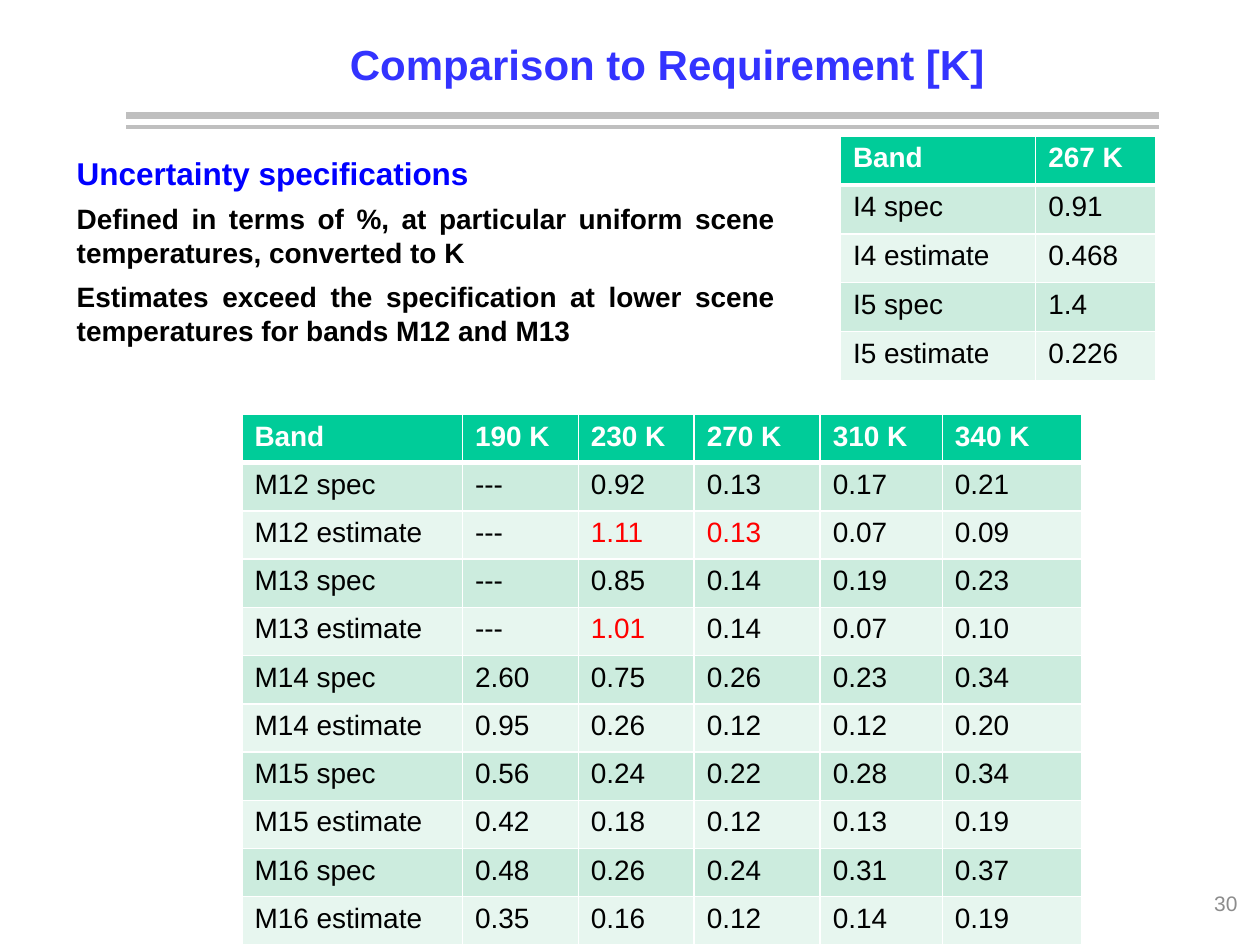
from lxml.etree import SubElement
from pptx import Presentation
from pptx.dml.color import RGBColor
from pptx.enum.shapes import MSO_CONNECTOR as Connector, MSO_SHAPE as Shape
from pptx.enum.text import MSO_ANCHOR as Anchor, PP_ALIGN as Align
from pptx.oxml import parse_xml
from pptx.oxml.ns import nsdecls, qn
from pptx.util import Inches, Pt

COLORS = {
    "title": "3333FF", "heading": "0000FF", "text": "000000", "alert": "FF0000",
    "rule": "BFBFBF", "number": "8C8C8C", "white": "FFFFFF",
    "header": "00CC99", "dark_band": "CCECDE", "light_band": "E7F6EF",
}

I_BANDS = [
    ["Band", "267 K"],
    ["I4 spec", "0.91"],
    ["I4 estimate", "0.468"],
    ["I5 spec", "1.4"],
    ["I5 estimate", "0.226"],
]
M_BANDS = [
    ["Band", "190 K", "230 K", "270 K", "310 K", "340 K"],
    ["M12 spec", "---", "0.92", "0.13", "0.17", "0.21"],
    ["M12 estimate", "---", "1.11", "0.13", "0.07", "0.09"],
    ["M13 spec", "---", "0.85", "0.14", "0.19", "0.23"],
    ["M13 estimate", "---", "1.01", "0.14", "0.07", "0.10"],
    ["M14 spec", "2.60", "0.75", "0.26", "0.23", "0.34"],
    ["M14 estimate", "0.95", "0.26", "0.12", "0.12", "0.20"],
    ["M15 spec", "0.56", "0.24", "0.22", "0.28", "0.34"],
    ["M15 estimate", "0.42", "0.18", "0.12", "0.13", "0.19"],
    ["M16 spec", "0.48", "0.26", "0.24", "0.31", "0.37"],
    ["M16 estimate", "0.35", "0.16", "0.12", "0.14", "0.19"],
]
EXCEEDED = {(2, 2), (2, 3), (4, 2)}


def rgb(name):
    """Return the palette color with the given name."""
    return RGBColor.from_string(COLORS[name])


def style(para, size, color, bold=False, align=Align.LEFT):
    """Set the font and alignment of a paragraph."""
    para.alignment = align
    para.font.name = "Arial"
    para.font.size = Pt(size)
    para.font.bold = bold
    para.font.color.rgb = rgb(color)


def add_label(page, box, text, size, color, bold, align):
    """Place one vertically centered line of text in the box."""
    frame = page.shapes.add_textbox(*map(Inches, box)).text_frame
    frame.word_wrap = True
    frame.vertical_anchor = Anchor.MIDDLE
    frame.text = text
    style(frame.paragraphs[0], size, color, bold, align)


def add_rules(page, box):
    """Draw a thick rule on the top edge of the box and a thin one on its bottom."""
    left, top, width, height = box
    for y, weight in ((top, 4), (top + height, 2)):
        rule = page.shapes.add_connector(
            Connector.STRAIGHT, Inches(left), Inches(y), Inches(left + width), Inches(y))
        rule.line.color.rgb = rgb("rule")
        rule.line.width = Pt(weight)
        SubElement(rule._element.spPr, qn("a:effectLst"))


def add_summary(page, box, heading, statements):
    """Place the heading and its justified statements in a rounded panel."""
    panel = page.shapes.add_shape(Shape.ROUNDED_RECTANGLE, *map(Inches, box))
    panel.adjustments[0] = 0.17
    panel.shadow.inherit = False
    panel.fill.background()
    panel.line.fill.background()
    frame = panel.text_frame
    frame.word_wrap = True
    frame.vertical_anchor = Anchor.TOP
    frame.text = "\n".join([heading, *statements])
    first, *others = frame.paragraphs
    style(first, 18, "heading", True)
    for para in others:
        style(para, 16, "text", True, Align.JUSTIFY)
    for para in frame.paragraphs[:-1]:
        para.space_after = Pt(6)


def set_borders(cell, bottom):
    """Draw white borders around a cell, with the given bottom weight."""
    properties = cell._tc.get_or_add_tcPr()
    for side, weight in (("L", 1), ("R", 1), ("T", 1), ("B", bottom)):
        properties.append(parse_xml(
            f'<a:ln{side} {nsdecls("a")} w="{Pt(weight)}"><a:solidFill>'
            f'<a:srgbClr val="{COLORS["white"]}"/></a:solidFill></a:ln{side}>'))


def add_band_table(page, box, widths, rows, alerts=()):
    """Fill the box with a banded table, marking the alert cells in red."""
    table = page.shapes.add_table(len(rows), len(widths), *map(Inches, box)).table
    for column, width in zip(table.columns, widths):
        column.width = Inches(width)
    for r, values in enumerate(rows):
        table.rows[r].height = Inches(box[3] / len(rows))
        header = r == 0
        fill = "header" if header else "dark_band" if r % 2 else "light_band"
        for c, value in enumerate(values):
            cell = table.cell(r, c)
            set_borders(cell, 3 if header else 1)
            cell.fill.solid()
            cell.fill.fore_color.rgb = rgb(fill)
            cell.text = value
            color = "white" if header else "alert" if (r, c) in alerts else "text"
            style(cell.text_frame.paragraphs[0], 16, color, header)
            if r == 1:
                set_top = cell._tc.tcPr.find(qn("a:lnT"))
                set_top.set("w", str(Pt(3)))


def main():
    """Build and save the comparison slide."""
    deck = Presentation()
    deck.slide_width, deck.slide_height = Inches(10), Inches(7.5)
    page = deck.slides.add_slide(deck.slide_layouts[6])
    add_rules(page, (1, 0.92, 8.2, 0.09))
    add_band_table(page, (6.67, 1.08, 2.5, 1.94), [1.55, 0.95], I_BANDS)
    add_label(page, (1.67, 0.17, 7.25, 0.67), "Comparison to Requirement [K]",
              24, "title", True, Align.CENTER)
    add_summary(page, (0.42, 1.08, 5.92, 1.82), "Uncertainty specifications", [
        "Defined in terms of %, at particular uniform scene temperatures, converted to K",
        "Estimates exceed the specification at lower scene temperatures for bands M12 and M13",
    ])
    add_band_table(page, (1.92, 3.29, 6.67, 4.21), [1.75, 0.92, 0.92, 1, 0.97, 1.11],
                   M_BANDS, EXCEEDED)
    add_label(page, (9.2, 6.92, 0.72, 0.5), "30", 12, "number", False, Align.RIGHT)
    deck.save("out.pptx")


if __name__ == "__main__":
    main()
